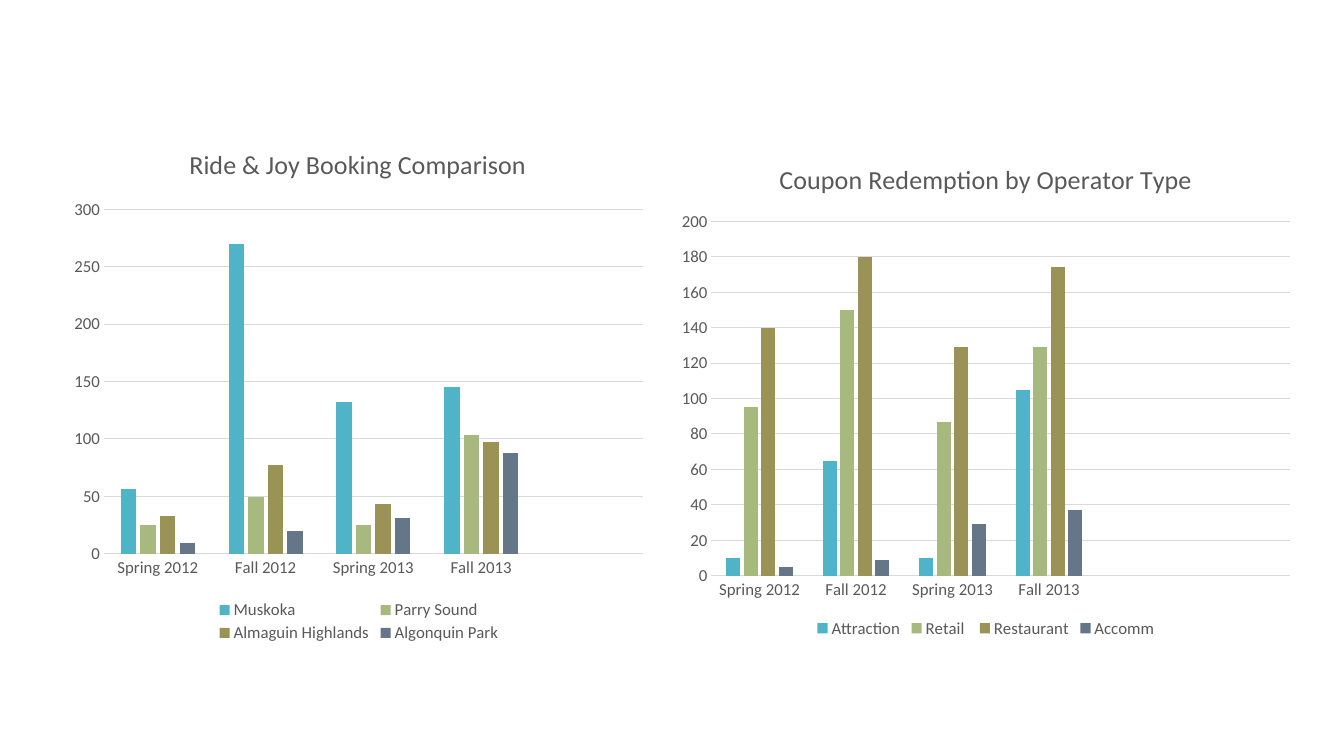
import dataclasses
from typing import Any, Optional

import lxml.etree
import pptx
import pptx.chart.data
import pptx.dml.color
import pptx.enum.chart
import pptx.oxml.ns
import pptx.util

SLIDE_WIDTH = pptx.util.Inches(13.33)
SLIDE_HEIGHT = pptx.util.Inches(7.5)
GRID_CELL = pptx.util.Inches(0.1)

BLACK = pptx.dml.color.RGBColor(0x00, 0x00, 0x00)
GRAY_TEXT = pptx.dml.color.RGBColor(0x59, 0x59, 0x59)
GRAY_LINE = pptx.dml.color.RGBColor(0xD9, 0xD9, 0xD9)
TEAL = pptx.dml.color.RGBColor(0x50, 0xB4, 0xC8)
GREEN = pptx.dml.color.RGBColor(0xA8, 0xB9, 0x7F)
OLIVE = pptx.dml.color.RGBColor(0x9B, 0x92, 0x56)
SLATE = pptx.dml.color.RGBColor(0x65, 0x76, 0x89)
SERIES_COLORS = (TEAL, GREEN, OLIVE, SLATE)

SEASONS = ("Spring 2012", "Fall 2012", "Spring 2013", "Fall 2013")


@dataclasses.dataclass(frozen=True)
class Area:
    left: float
    top: float
    width: Optional[float] = None
    height: Optional[float] = None


@dataclasses.dataclass(frozen=True)
class SeasonChart:
    title: str
    cells: Area
    title_percent: Area
    plot_percent: Area
    legend_percent: Area
    empty_seasons: int
    maximum: int
    step: int
    series: dict[str, tuple[int, ...]]


CHARTS = (
    SeasonChart(
        title="Ride & Joy Booking Comparison",
        cells=Area(6.2, 12.4, 58.8, 51.8),
        title_percent=Area(20.6, 3.1),
        plot_percent=Area(7, 16.2, 90.9, 65.9),
        legend_percent=Area(25.5, 90.5, 49, 9.2),
        empty_seasons=1,
        maximum=300,
        step=50,
        series={
            "Muskoka ": (56, 270, 132, 145),
            "Parry Sound ": (25, 49, 25, 103),
            "Almaguin Highlands": (33, 77, 43, 97),
            "Algonquin Park": (9, 20, 31, 88),
        },
    ),
    SeasonChart(
        title="Coupon Redemption by Operator Type",
        cells=Area(66.4, 14.2, 62.9, 49.8),
        title_percent=Area(16.6, 2.7),
        plot_percent=Area(6.6, 15.6, 91.3, 70.6),
        legend_percent=Area(22.4, 95.1, 55, 4.9),
        empty_seasons=2,
        maximum=200,
        step=20,
        series={
            "Attraction": (10, 65, 10, 105),
            "Retail ": (95, 150, 87, 129),
            "Restaurant": (140, 180, 129, 174),
            "Accomm": (5, 9, 29, 37),
        },
    ),
)


def apply_format(target: Any, values: dict[str, Any]) -> None:
    for name, value in values.items():
        setattr(target, name, value)


def format_font(font: Any, size: float, color: pptx.dml.color.RGBColor) -> None:
    apply_format(font, {"name": "Calibri", "size": pptx.util.Pt(size), "bold": False})
    font.color.rgb = color


def format_line(line: Any) -> None:
    line.color.rgb = GRAY_LINE
    line.width = pptx.util.Pt(0.75)


def place_part(part: Any, percent: Area, position: int, inner: bool = False) -> None:
    name = pptx.oxml.ns.qn
    for old_layout in part.findall(name("c:layout")):
        part.remove(old_layout)
    layout = lxml.etree.Element(name("c:layout"))
    manual = lxml.etree.SubElement(layout, name("c:manualLayout"))
    settings: dict[str, Any] = {"layoutTarget": "inner"} if inner else {}
    settings |= {"xMode": "edge", "yMode": "edge"}
    shares = {"x": percent.left, "y": percent.top, "w": percent.width, "h": percent.height}
    settings |= {key: round(share / 100, 3) for key, share in shares.items() if share is not None}
    for key, value in settings.items():
        lxml.etree.SubElement(manual, name(f"c:{key}")).set("val", str(value))
    part.insert(position, layout)


def format_axes(chart: Any, design: SeasonChart) -> None:
    for axis in (chart.category_axis, chart.value_axis):
        apply_format(axis, {
            "major_tick_mark": pptx.enum.chart.XL_TICK_MARK.NONE,
            "minor_tick_mark": pptx.enum.chart.XL_TICK_MARK.NONE,
        })
        format_font(axis.tick_labels.font, 12, GRAY_TEXT)
    format_line(chart.category_axis.format.line)
    apply_format(chart.value_axis, {
        "minimum_scale": 0,
        "maximum_scale": design.maximum,
        "major_unit": design.step,
        "has_major_gridlines": True,
    })
    chart.value_axis.format.line.fill.background()
    format_line(chart.value_axis.major_gridlines.format.line)


def add_season_chart(slide: Any, design: SeasonChart) -> None:
    data = pptx.chart.data.CategoryChartData()
    data.categories = SEASONS + ("",) * design.empty_seasons
    for name, values in design.series.items():
        data.add_series(name, values + (None,) * design.empty_seasons)
    cells = design.cells
    bounds = [round(cell * GRID_CELL) for cell in (cells.left, cells.top, cells.width, cells.height)]
    chart = slide.shapes.add_chart(
        pptx.enum.chart.XL_CHART_TYPE.COLUMN_CLUSTERED, *bounds, data
    ).chart
    format_font(chart.font, 10, BLACK)

    apply_format(chart, {"has_title": True, "has_legend": True})
    title_frame = chart.chart_title.text_frame
    title_frame.text = design.title
    format_font(title_frame.paragraphs[0].runs[0].font, 18.6, GRAY_TEXT)
    chart.chart_title.include_in_layout = False
    apply_format(chart.legend, {
        "position": pptx.enum.chart.XL_LEGEND_POSITION.BOTTOM,
        "include_in_layout": False,
    })
    format_font(chart.legend.font, 12, GRAY_TEXT)

    format_axes(chart, design)
    plot = chart.plots[0]
    apply_format(plot, {"gap_width": 219, "overlap": -27, "vary_by_categories": False})
    for series, color in zip(plot.series, SERIES_COLORS):
        series.format.fill.solid()
        series.format.fill.fore_color.rgb = color

    chart_element = chart.element.find(pptx.oxml.ns.qn("c:chart"))
    for tag, percent, position, inner in (
        ("c:title", design.title_percent, 1, False),
        ("c:plotArea", design.plot_percent, 0, True),
        ("c:legend", design.legend_percent, 1, False),
    ):
        place_part(chart_element.find(pptx.oxml.ns.qn(tag)), percent, position, inner)


def main() -> None:
    presentation = pptx.Presentation()
    apply_format(presentation, {"slide_width": SLIDE_WIDTH, "slide_height": SLIDE_HEIGHT})
    slide = presentation.slides.add_slide(presentation.slide_layouts[6])
    for design in CHARTS:
        add_season_chart(slide, design)
    presentation.save("out.pptx")


if __name__ == "__main__":
    main()
